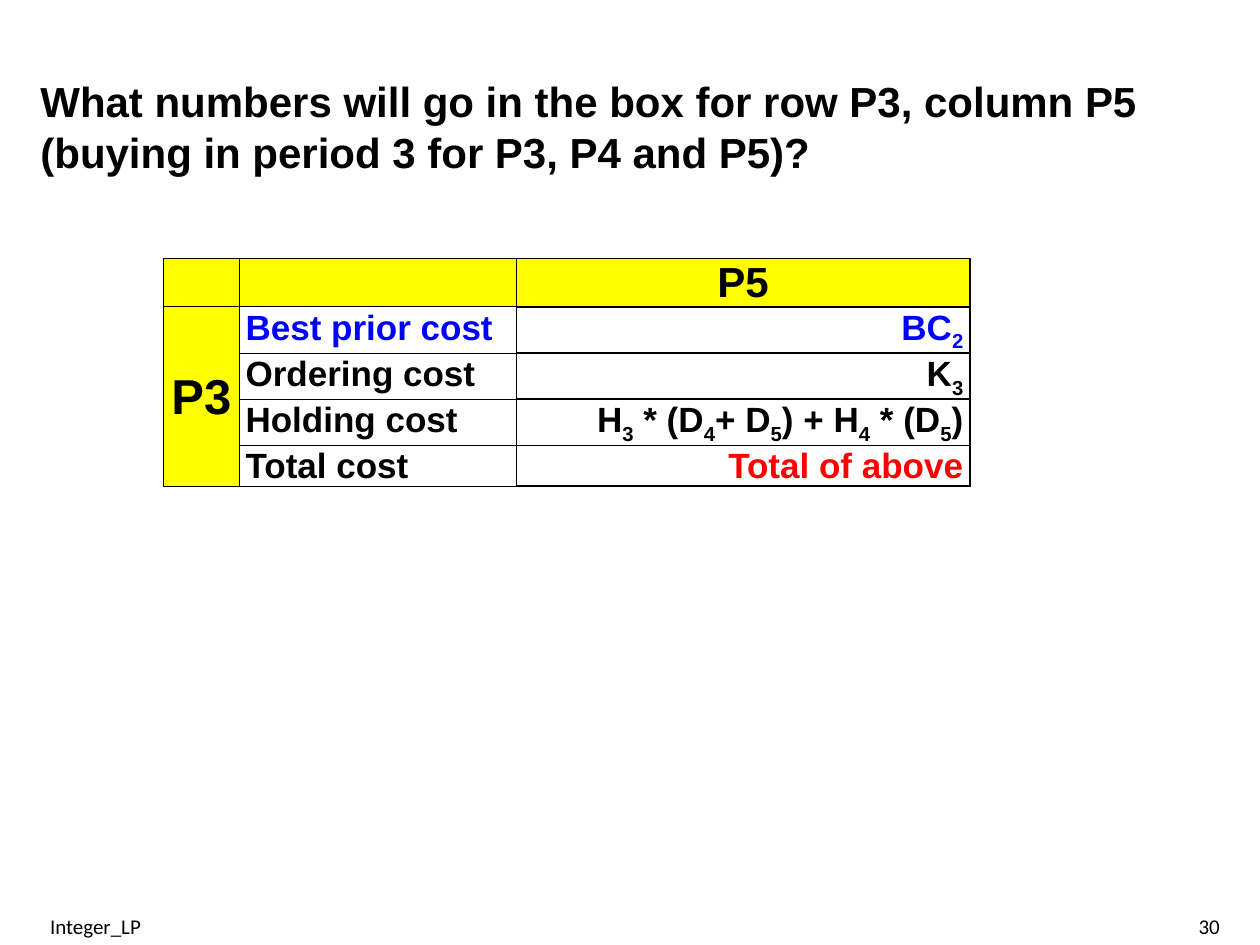
from dataclasses import dataclass
from typing import Optional

from lxml.etree import SubElement
from pptx import Presentation
from pptx.dml.color import RGBColor
from pptx.enum.text import MSO_ANCHOR as Anchor, MSO_AUTO_SIZE as AutoSize, PP_ALIGN as Align
from pptx.oxml.ns import qn
from pptx.util import Cm, Pt

COLORS = {
    "text": "000000",
    "header": "FFFF00",
    "prior": "0000FF",
    "total": "FF0000",
}
THIN, THICK = Pt(0.5), Pt(1)


@dataclass
class CostRow:
    label: str
    formula: str  # "_" marks the next character as a subscript
    height: float
    label_color: str = "text"
    formula_color: str = "text"


@dataclass
class Footer:
    text: str
    left: float
    width: float
    align: Align


COLUMN_WIDTHS = (1.52, 5.59, 9.14)
HEADER_HEIGHT = 0.97
COST_ROWS = [
    CostRow("Best prior cost", "BC_2", 0.93, "prior", "prior"),
    CostRow("Ordering cost", "K_3", 0.93),
    CostRow("Holding cost", "H_3 * (D_4+ D_5) + H_4 * (D_5)", 0.93),
    CostRow("Total cost", "Total of above", 0.81, formula_color="total"),
]
FOOTERS = [
    Footer("Integer_LP", 0.76, 8.05, Align.LEFT),
    Footer("30", 19.56, 5.28, Align.RIGHT),
]


def rgb(name: str) -> RGBColor:
    return RGBColor.from_string(COLORS[name])


def format_paragraph(paragraph, size: float, align: Align, color: str = "text",
                     face: str = "Arial", bold: bool = True) -> None:
    paragraph.alignment = align
    font = paragraph.font
    font.name, font.size, font.bold = face, Pt(size), bold
    font.color.rgb = rgb(color)


def add_formula(paragraph, formula: str) -> None:
    first, *rest = formula.split("_")
    paragraph.add_run().text = first
    for part in rest:
        subscript = paragraph.add_run()
        subscript.text = part[0]
        subscript.font._element.set("baseline", "-25000")
        if part[1:]:
            paragraph.add_run().text = part[1:]


def style_cell(cell, column: int, fill: Optional[str]) -> None:
    """Set the margins, borders and fill of a cell."""
    cell.margin_left = cell.margin_right = Cm(0.13)
    cell.margin_top, cell.margin_bottom = Cm(0.03), 0
    properties = cell._tc.get_or_add_tcPr()
    last = column == len(COLUMN_WIDTHS) - 1
    for side in "LRTB":
        thick = last or (side == "L" and column == 0)
        line = SubElement(properties, qn(f"a:ln{side}"), w=str(THICK if thick else THIN))
        SubElement(SubElement(line, qn("a:solidFill")), qn("a:srgbClr"), val=COLORS["text"])
    if fill:
        cell.fill.solid()
        cell.fill.fore_color.rgb = rgb(fill)
    else:
        cell.fill.background()


def write_cell(cell, text: str, size: float, align: Align, anchor: Anchor,
               color: str = "text") -> None:
    cell.vertical_anchor = anchor
    paragraph = cell.text_frame.paragraphs[0]
    format_paragraph(paragraph, size, align, color)
    add_formula(paragraph, text)


def add_cost_table(slide) -> None:
    heights = [HEADER_HEIGHT] + [row.height for row in COST_ROWS]
    table = slide.shapes.add_table(
        len(heights), len(COLUMN_WIDTHS), Cm(3.3), Cm(5.21),
        Cm(sum(COLUMN_WIDTHS)), Cm(sum(heights))).table
    table.first_row = table.horz_banding = False
    for column, width in zip(table.columns, COLUMN_WIDTHS):
        column.width = Cm(width)
    for row, height in zip(table.rows, heights):
        row.height = Cm(height)
    for r in range(len(heights)):
        for c in range(len(COLUMN_WIDTHS)):
            style_cell(table.cell(r, c), c, "header" if r == 0 or c == 0 else None)

    table.cell(1, 0).merge(table.cell(len(COST_ROWS), 0))
    write_cell(table.cell(0, 2), "P5", 24, Align.CENTER, Anchor.BOTTOM)
    write_cell(table.cell(1, 0), "P3", 28, Align.CENTER, Anchor.MIDDLE)
    for r, cost in enumerate(COST_ROWS, start=1):
        write_cell(table.cell(r, 1), cost.label, 20, Align.LEFT, Anchor.TOP, cost.label_color)
        write_cell(table.cell(r, 2), cost.formula, 20, Align.RIGHT, Anchor.BOTTOM,
                   cost.formula_color)


def set_title(slide, text: str) -> None:
    title = slide.shapes.title
    title.left, title.top, title.width, title.height = Cm(0.56), Cm(1.4), Cm(24.13), Cm(2.31)
    frame = title.text_frame
    frame.text = text
    frame.word_wrap = True
    frame.auto_size = AutoSize.NONE
    frame.vertical_anchor = Anchor.TOP
    format_paragraph(frame.paragraphs[0], 24, Align.LEFT)


def add_footer(slide, footer: Footer) -> None:
    box = slide.shapes.add_textbox(Cm(footer.left), Cm(18.29), Cm(footer.width), Cm(0.76))
    frame = box.text_frame
    frame.word_wrap = True
    frame.vertical_anchor = Anchor.MIDDLE
    frame.text = footer.text
    format_paragraph(frame.paragraphs[0], 12, footer.align, face="Calibri", bold=False)


def main() -> None:
    deck = Presentation()
    deck.slide_width, deck.slide_height = Cm(25.4), Cm(19.05)
    slide = deck.slides.add_slide(deck.slide_layouts[5])
    set_title(slide, "What numbers will go in the box for row P3, column P5 "
                     "(buying in period 3 for P3, P4 and P5)?")
    add_cost_table(slide)
    for footer in FOOTERS:
        add_footer(slide, footer)
    deck.save("out.pptx")


if __name__ == "__main__":
    main()
